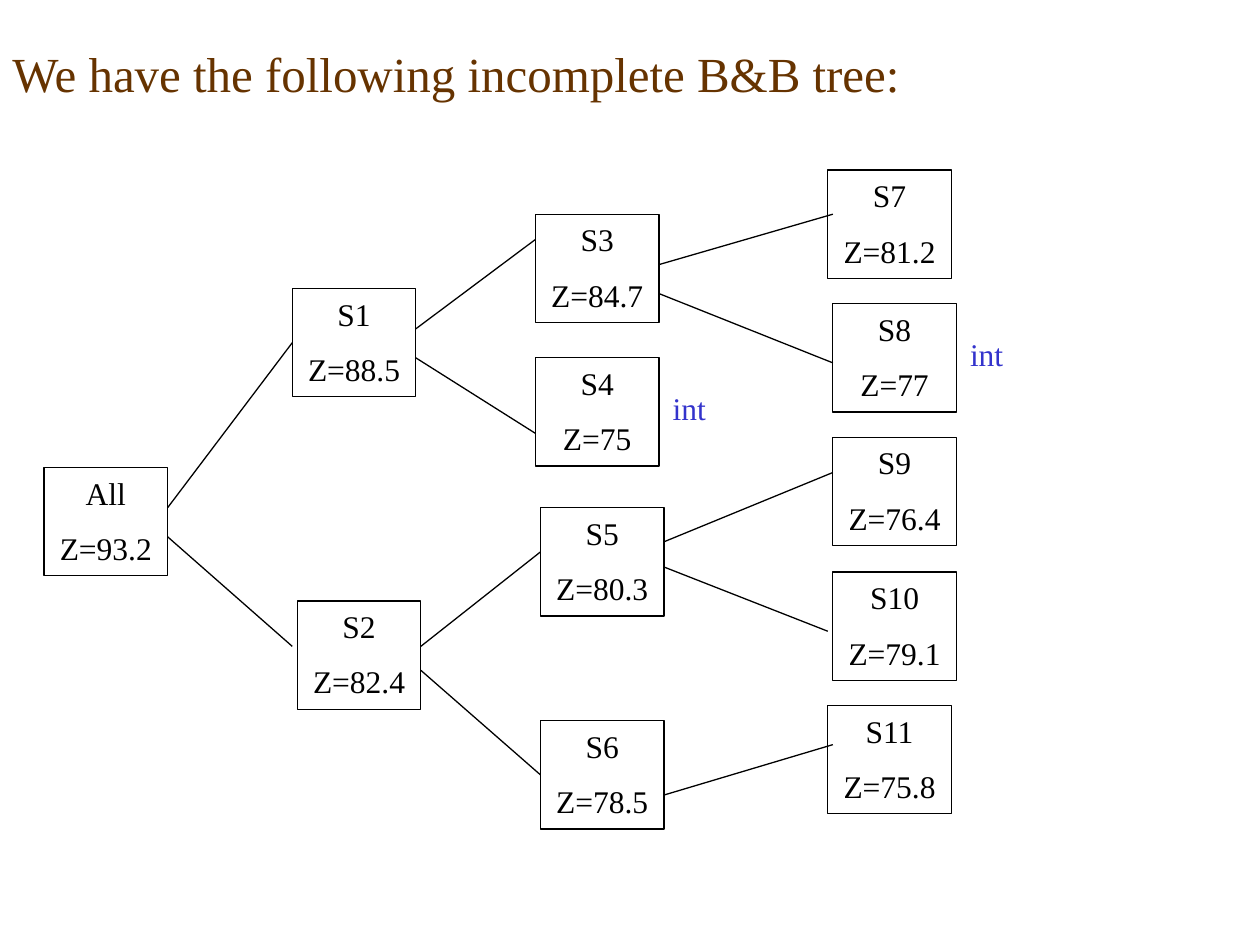
from lxml.etree import SubElement
from pptx import Presentation
from pptx.dml.color import RGBColor
from pptx.enum.shapes import MSO_CONNECTOR, MSO_SHAPE
from pptx.enum.text import MSO_ANCHOR, PP_ALIGN
from pptx.oxml.ns import qn
from pptx.util import Inches, Pt

BLACK = RGBColor(0x00, 0x00, 0x00)
BROWN = RGBColor(0x66, 0x33, 0x00)
BLUE = RGBColor(0x33, 0x33, 0xCC)

LEFT_SIDE = 1

NODES = {
    "All": ("Z=93.2", 0.35, 3.71),
    "S1": ("Z=88.5", 2.32, 2.29),
    "S2": ("Z=82.4", 2.36, 4.77),
    "S3": ("Z=84.7", 4.25, 1.70),
    "S4": ("Z=75", 4.25, 2.84),
    "S5": ("Z=80.3", 4.29, 4.03),
    "S6": ("Z=78.5", 4.29, 5.72),
    "S7": ("Z=81.2", 6.57, 1.35),
    "S8": ("Z=77", 6.61, 2.41),
    "S9": ("Z=76.4", 6.61, 3.47),
    "S10": ("Z=79.1", 6.61, 4.54),
    "S11": ("Z=75.8", 6.57, 5.60),
}

BRANCHES = [
    ("All", 4.03, 2.32, 2.73, "S1"),
    ("All", 4.26, 2.32, 5.13, None),
    ("S1", 2.61, 4.25, 1.90, None),
    ("S1", 2.84, 4.25, 3.44, None),
    ("S2", 5.13, 4.29, 4.38, None),
    ("S2", 5.32, 4.29, 6.15, "S6"),
    ("S3", 2.10, 6.61, 1.70, None),
    ("S3", 2.33, 6.61, 2.88, None),
    ("S5", 4.30, 6.61, 3.75, None),
    ("S5", 4.50, 6.57, 5.01, None),
    ("S6", 6.31, 6.61, 5.91, None),
]

INTEGER_LABELS = [(5.24, 3.04), (7.60, 2.61)]


class TreePage:
    font_name = "Times New Roman"
    node_width = Inches(0.98)
    node_height = Inches(0.86)
    line_width = Pt(0.75)
    value_gap = Pt(10)

    def __init__(self, deck):
        self.page = deck.slides.add_slide(deck.slide_layouts[6])

    def fill_text(self, shape, text, size, color, align, anchor):
        frame = shape.text_frame
        frame.text = text
        frame.word_wrap = True
        frame.vertical_anchor = anchor
        for index, para in enumerate(frame.paragraphs):
            para.alignment = align
            if index:
                para.space_before = self.value_gap
            for span in para.runs:
                span.font.name = self.font_name
                span.font.size = Pt(size)
                span.font.color.rgb = color

    def label(self, text, left, top, width, height, size, color, anchor=MSO_ANCHOR.TOP):
        box = self.page.shapes.add_textbox(
            Inches(left), Inches(top), Inches(width), Inches(height)
        )
        self.fill_text(box, text, size, color, PP_ALIGN.LEFT, anchor)

    def node(self, name, value, left, top):
        box = self.page.shapes.add_shape(
            MSO_SHAPE.RECTANGLE, Inches(left), Inches(top), self.node_width, self.node_height
        )
        box.shadow.inherit = False
        box.fill.background()
        box.line.color.rgb = BLACK
        box.line.width = self.line_width
        self.fill_text(box, f"{name}\n{value}", 18, BLACK, PP_ALIGN.CENTER, MSO_ANCHOR.TOP)
        return box

    def branch(self, parent, start_y, end_x, end_y, child=None):
        line = self.page.shapes.add_connector(
            MSO_CONNECTOR.STRAIGHT,
            parent.left + parent.width,
            Inches(start_y),
            Inches(end_x),
            Inches(end_y),
        )
        line.line.color.rgb = BLACK
        line.line.width = self.line_width
        SubElement(line._element.spPr, qn("a:effectLst"))
        if child is not None:
            line.end_connect(child, LEFT_SIDE)


def main():
    deck = Presentation()
    deck.slide_width = Inches(10)
    deck.slide_height = Inches(7.5)
    tree = TreePage(deck)

    tree.label(
        "We have the following incomplete B&B tree:",
        0, 0, 10, 1.15, 28, BROWN, MSO_ANCHOR.MIDDLE,
    )
    boxes = {name: tree.node(name, *details) for name, details in NODES.items()}
    for parent, start_y, end_x, end_y, child in BRANCHES:
        tree.branch(boxes[parent], start_y, end_x, end_y, boxes.get(child))
    for left, top in INTEGER_LABELS:
        tree.label("int", left, top, 0.55, 0.4, 18, BLUE)

    deck.save("out.pptx")


if __name__ == "__main__":
    main()
